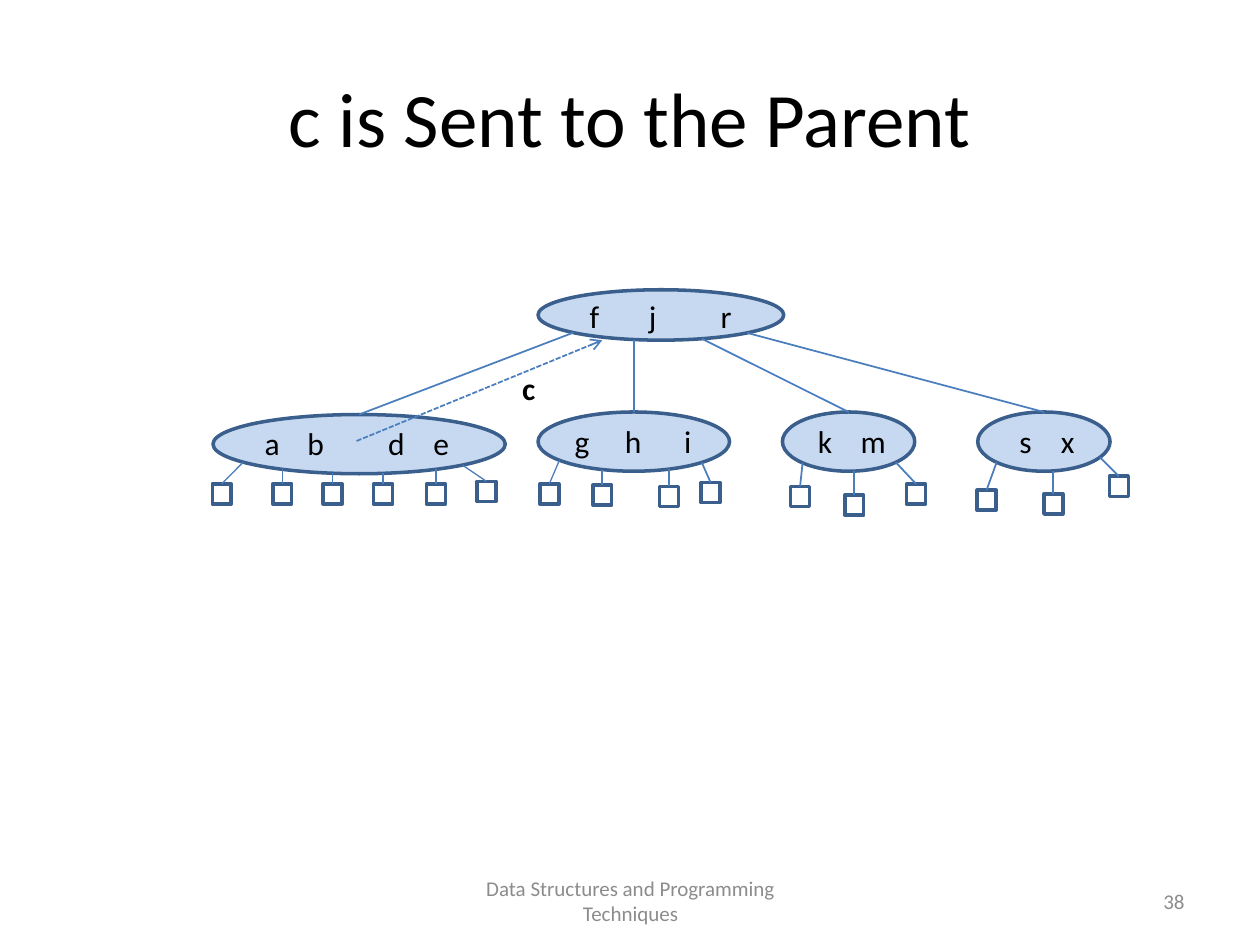
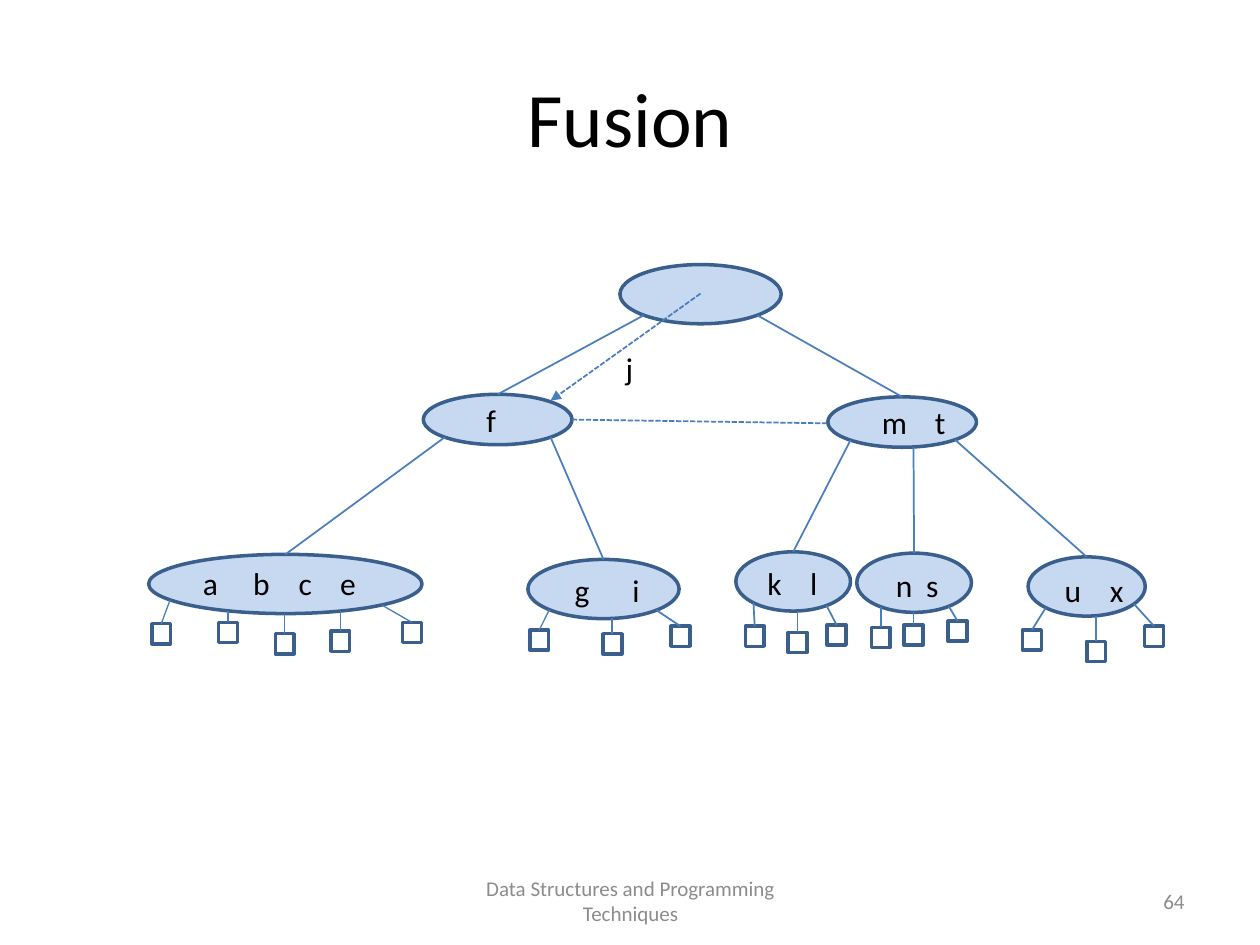
from dataclasses import dataclass
from math import sqrt
from typing import Optional

from lxml.etree import SubElement
from pptx import Presentation
from pptx.dml.color import RGBColor
from pptx.enum.dml import MSO_LINE
from pptx.enum.shapes import MSO_CONNECTOR, MSO_SHAPE
from pptx.enum.text import MSO_ANCHOR, PP_ALIGN
from pptx.oxml.ns import qn
from pptx.util import Inches, Pt

SLIDE_WIDTH, SLIDE_HEIGHT = Inches(10), Inches(7.5)
COLUMN, ROW = SLIDE_WIDTH / 100, SLIDE_HEIGHT / 75
FONT = "Calibri"
COLORS = {"text": "000000", "footer": "8C8C8C", "node": "C6D9F1", "outline": "3A5F8C", "link": "4B7EBC"}
FOOTER = "Data Structures and Programming Techniques"
LEAF_WIDTH, LEAF_HEIGHT = 1.5, 1.6
LABEL_HEIGHT, LABEL_INSET = 4, 1


@dataclass(frozen=True)
class Box:
    left: float
    top: float
    width: float
    height: float

    def emu(self) -> tuple[int, int, int, int]:
        return (round(self.left * COLUMN), round(self.top * ROW),
                round(self.width * COLUMN), round(self.height * ROW))

    def lower_rim(self, x: float) -> float:
        reach = 2 * (x - self.left) / self.width - 1
        return self.top + self.height / 2 * (1 + sqrt(1 - reach ** 2))


@dataclass(frozen=True)
class Leaf:
    rim: float
    center: float
    top: float


@dataclass(frozen=True)
class Node:
    oval: Box
    keys: str = ""
    label: Optional[Box] = None
    stops: tuple[float, ...] = ()
    parent: Optional[int] = None
    parent_rim: float = 0
    leaves: tuple[Leaf, ...] = ()
    thin_links: int = 0


@dataclass(frozen=True)
class Move:
    start: tuple[float, float]
    end: tuple[float, float]
    arrowhead: Optional[str] = None


@dataclass(frozen=True)
class TreeSlide:
    title: str
    number: int
    nodes: tuple[Node, ...]
    moves: tuple[Move, ...]
    moved_key: str
    moved_box: Box
    moved_bold: bool = False


def label_box(left: float, top: float, width: float) -> Box:
    return Box(left, top, width, LABEL_HEIGHT)


SENT_TO_PARENT = TreeSlide("c is Sent to the Parent", 38, (
    Node(Box(42.7, 23, 19.5, 4), "fjr", label_box(45.5, 23.1, 13.8), (46.8, 51.5, 57.2)),
    Node(Box(16.9, 32.9, 23.2, 4.7), "abde", label_box(18.9, 33.2, 18.8), (21, 24.4, 30.8, 34.4), 0, 45.5,
         (Leaf(19.3, 17.6, 38.4), Leaf(22.4, 22.4, 38.4), Leaf(26.4, 26.4, 38.4),
          Leaf(30.4, 30.4, 38.4), Leaf(34.6, 34.6, 38.4), Leaf(36.7, 38.6, 38.2)), 6),
    Node(Box(42.7, 32.7, 15.2, 4.7), "ghi", label_box(42.8, 33, 14.9), (45.6, 49.6, 54.3), 0, 50.3,
         (Leaf(44.4, 43.6, 38.4), Leaf(47.8, 47.8, 38.5), Leaf(53.1, 53.1, 38.6), Leaf(55.7, 56.4, 38.3)), 1),
    Node(Box(62.1, 32.7, 10.5, 4.7), "km", label_box(63.5, 33, 8.2), (64.9, 68.3), 0, 55.7,
         (Leaf(63.7, 63.5, 38.6), Leaf(67.8, 67.8, 39.3), Leaf(71.1, 72.7, 38.4))),
    Node(Box(77.6, 32.7, 10.5, 4.7), "sx", label_box(79, 33, 8.2), (80.9, 84.2), 0, 59.3,
         (Leaf(79.1, 78.3, 38.9), Leaf(83.6, 83.6, 39.2), Leaf(87.3, 88.8, 37.8))),
), (Move((28.3, 35), (47.8, 27), "arrow"),), "c", label_box(39.9, 28.8, 4.1), True)

FUSION = TreeSlide("Fusion", 64, (
    Node(Box(49.2, 21, 12.8, 4.7)),
    Node(Box(33.6, 31.3, 11.8, 4), "f", label_box(35.7, 31.3, 6.6), (38.6,), 0, 51.1),
    Node(Box(65.7, 31.5, 11.8, 4), "mt", label_box(68.8, 31.5, 7.4), (70, 74.2), 0, 60.1),
    Node(Box(11.8, 44, 21.7, 4.7), "abce", label_box(13.5, 44.3, 18.4), (16.1, 20.1, 23.7, 27), 1, 35.3,
         (Leaf(13.5, 12.8, 49.5), Leaf(18.1, 18.1, 49.4), Leaf(22.6, 22.6, 50.3),
          Leaf(27, 27, 50.1), Leaf(30.3, 32.7, 49.4)), 5),
    Node(Box(41.9, 44.4, 12, 4.7), "gi", label_box(42.4, 44.8, 11.6), (45.6, 50.2), 1, 43.7,
         (Leaf(43.6, 42.8, 50), Leaf(48.6, 48.6, 50.3), Leaf(52.1, 54, 49.7)), 1),
    Node(Box(58.4, 43.8, 9.1, 4.7), "kl", label_box(59.3, 44.3, 7.2), (60.9, 64.3), 2, 67.5,
         (Leaf(59.8, 59.9, 49.7), Leaf(63.3, 63.3, 50.2), Leaf(65.6, 66.4, 49.6))),
    Node(Box(68, 43.9, 9.1, 4.7), "ns", label_box(69.2, 44.4, 7.2), (71.1, 73.5), 2, 72.5,
         (Leaf(69.9, 69.9, 49.8), Leaf(72.5, 72.5, 49.6), Leaf(75.3, 76, 49.3))),
    Node(Box(81.6, 44.2, 9.3, 4.7), "ux", label_box(81.4, 44.8, 9.7), (84.5, 88.1), 2, 75.8,
         (Leaf(83, 81.9, 50), Leaf(87, 87, 50.9), Leaf(90, 91.6, 49.7))),
), (Move((45.4, 33.3), (65.7, 33.6)), Move((55.6, 23.3), (43.7, 31.8), "triangle")),
    "j", label_box(48.2, 27.2, 3.5))


def rgb(name: str) -> RGBColor:
    return RGBColor.from_string(COLORS[name])


def add_text(slide, box: Box, text: str, size: int, color: str = "text", align=PP_ALIGN.CENTER,
             anchor=MSO_ANCHOR.MIDDLE, bold: bool = False):
    text_box = slide.shapes.add_textbox(*box.emu())
    frame = text_box.text_frame
    frame.word_wrap = True
    frame.vertical_anchor = anchor
    frame.text = text
    paragraph = frame.paragraphs[0]
    paragraph.alignment = align
    for run in paragraph.runs:
        run.font.name, run.font.size, run.font.bold = FONT, Pt(size), bold
        run.font.color.rgb = rgb(color)
    return text_box


def add_keys(slide, node: Node) -> None:
    text_box = add_text(slide, node.label, "\t".join(node.keys), 18, align=PP_ALIGN.LEFT, anchor=MSO_ANCHOR.TOP)
    frame = text_box.text_frame
    first = node.stops[0]
    frame.margin_left = round((first - node.label.left) * COLUMN)
    frame.margin_right = 0
    properties = frame.paragraphs[0]._p.get_or_add_pPr()
    tab_list = SubElement(properties, qn("a:tabLst"))
    for stop in node.stops[1:]:
        SubElement(tab_list, qn("a:tab"), pos=str(round((stop - first) * COLUMN)), algn="l")


def add_outlined(slide, kind, box: Box, filled: bool):
    shape = slide.shapes.add_shape(kind, *box.emu())
    shape.shadow.inherit = False
    if filled:
        shape.fill.solid()
        shape.fill.fore_color.rgb = rgb("node")
    else:
        shape.fill.background()
    shape.line.color.rgb = rgb("outline")
    shape.line.width = Pt(2)
    return shape


def add_link(slide, start: tuple[float, float], end: tuple[float, float], width: float = 1):
    points = [round(length) for x, y in (start, end) for length in (x * COLUMN, y * ROW)]
    link = slide.shapes.add_connector(MSO_CONNECTOR.STRAIGHT, *points)
    link.line.color.rgb = rgb("link")
    link.line.width = Pt(width)
    SubElement(link._element.spPr, qn("a:effectLst"))
    return link


def link_to_top(slide, parent: Box, rim: float, child, width: float = 1) -> None:
    start = (rim, parent.lower_rim(rim))
    add_link(slide, start, start, width).end_connect(child, 0)


def add_move(slide, move: Move) -> None:
    link = add_link(slide, move.start, move.end)
    link.line.dash_style = MSO_LINE.SQUARE_DOT
    if move.arrowhead:
        SubElement(link.line._get_or_add_ln(), qn("a:tailEnd"), type=move.arrowhead)


def add_node(slide, node: Node, nodes: tuple[Node, ...]) -> None:
    oval = add_outlined(slide, MSO_SHAPE.OVAL, node.oval, True)
    if node.parent is not None:
        link_to_top(slide, nodes[node.parent].oval, node.parent_rim, oval)
    if node.keys:
        add_keys(slide, node)
    for index, leaf in enumerate(node.leaves):
        square = Box(leaf.center - LEAF_WIDTH / 2, leaf.top, LEAF_WIDTH, LEAF_HEIGHT)
        shape = add_outlined(slide, MSO_SHAPE.RECTANGLE, square, False)
        link_to_top(slide, node.oval, leaf.rim, shape, 0.75 if index < node.thin_links else 1)


def add_tree_slide(presentation, tree: TreeSlide) -> None:
    slide = presentation.slides.add_slide(presentation.slide_layouts[6])
    add_text(slide, Box(5, 3, 90, 12.5), tree.title, 44)
    add_text(slide, Box(34.2, 69.5, 31.7, 4), FOOTER, 12, "footer")
    add_text(slide, Box(71.7, 69.5, 23.3, 4), str(tree.number), 12, "footer", PP_ALIGN.RIGHT)
    for node in tree.nodes:
        add_node(slide, node, tree.nodes)
    for move in tree.moves:
        add_move(slide, move)
    add_text(slide, tree.moved_box, tree.moved_key, 18, anchor=MSO_ANCHOR.TOP, bold=tree.moved_bold)


def main() -> None:
    presentation = Presentation()
    presentation.slide_width, presentation.slide_height = SLIDE_WIDTH, SLIDE_HEIGHT
    for tree in (SENT_TO_PARENT, FUSION):
        add_tree_slide(presentation, tree)
    presentation.save("out.pptx")


if __name__ == "__main__":
    main()
